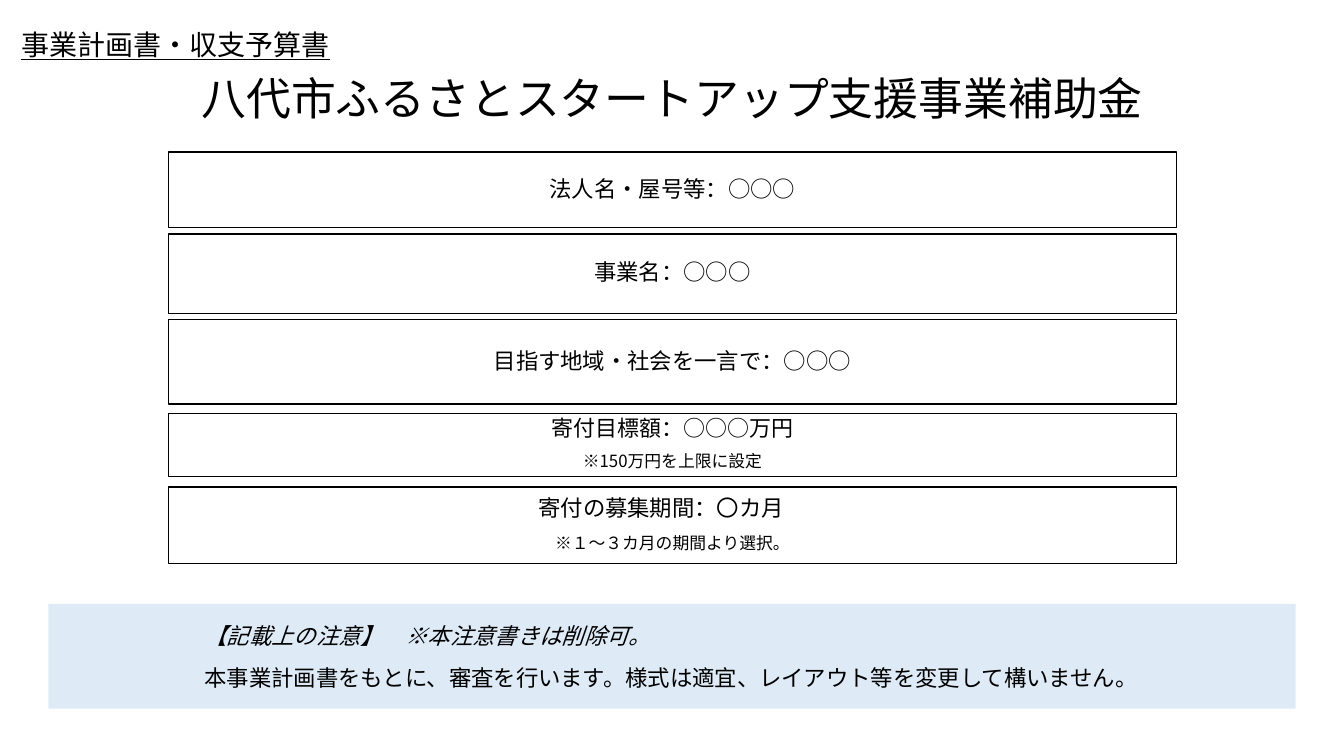
from dataclasses import dataclass

import lxml.etree
import pptx
import pptx.dml.color
import pptx.enum.shapes
import pptx.enum.text
import pptx.oxml.ns
import pptx.util

Inches = pptx.util.Inches
Pt = pptx.util.Pt
Align = pptx.enum.text.PP_ALIGN
Anchor = pptx.enum.text.MSO_ANCHOR


@dataclass(frozen=True)
class Theme:
    font: str = "Noto Sans CJK JP"
    ink: str = "000000"
    paper: str = "FFFFFF"
    tint: str = "DEEBF7"
    title: float = 32
    label: float = 20
    body: float = 16
    goal: float = 15.7
    hint: float = 12


THEME = Theme()


def color(code):
    return pptx.dml.color.RGBColor.from_string(code)


def style(para, size, align, space=None):
    """Set the type of a paragraph, for Latin and East Asian letters alike."""
    para.alignment = align
    para.line_spacing = space
    font = para.font
    font.size = Pt(size)
    font.color.rgb = color(THEME.ink)
    font.name = THEME.font
    qn = pptx.oxml.ns.qn
    props = para._p.pPr.find(qn("a:defRPr"))
    lxml.etree.SubElement(props, qn("a:ea")).set("typeface", THEME.font)


def write(frame, lines, align, space=None):
    """Fill a frame with (text, size) lines, 10 pt apart."""
    frame.word_wrap = True
    for i, (text, size) in enumerate(lines):
        para = frame.add_paragraph() if i else frame.paragraphs[0]
        para.text = text
        style(para, size, align, space)
        if i:
            para.space_before = Pt(10)


def add_text(slide, place, text, size, align, space=None):
    box = slide.shapes.add_textbox(*map(Inches, place))
    write(box.text_frame, [(text, size)], align, space)
    return box.text_frame


def add_box(slide, place, fill, lines, align, space, edge=None):
    box = slide.shapes.add_shape(
        pptx.enum.shapes.MSO_SHAPE.RECTANGLE, *map(Inches, place))
    box.shadow.inherit = False
    box.fill.solid()
    box.fill.fore_color.rgb = color(fill)
    if edge:
        box.line.color.rgb = color(edge)
        box.line.width = Pt(1)
    else:
        box.line.fill.background()
    frame = box.text_frame
    frame.vertical_anchor = Anchor.MIDDLE
    write(frame, lines, align, space)
    return frame


def add_fields(slide):
    body, hint = THEME.body, THEME.hint
    fields = [
        (1.51, 0.75, 0.9, [("法人名・屋号等：○○○", body)]),
        (2.32, 0.79, 0.9, [("事業名：○○○", body)]),
        (3.17, 0.84, 0.9, [("目指す地域・社会を一言で：○○○", body)]),
        (4.1, 0.63, 0.8, [("寄付目標額：○○○万円", THEME.goal),
                          ("※150万円を上限に設定", hint)]),
        (4.83, 0.76, 0.9, [("寄付の募集期間：〇カ月　", body),
                           ("※１～３カ月の期間より選択。", hint)]),
    ]
    for top, height, space, lines in fields:
        add_box(slide, (1.67, top, 10, height), THEME.paper, lines,
                Align.CENTER, space, THEME.ink)


def add_note(slide):
    lines = ["【記載上の注意】　※本注意書きは削除可。",
             "本事業計画書をもとに、審査を行います。様式は適宜、レイアウト等を変更して構いません。"]
    frame = add_box(slide, (0.48, 5.99, 12.37, 1.04), THEME.tint,
                    [(line, THEME.body) for line in lines],
                    Align.LEFT, Pt(20))
    frame.margin_left = Inches(1.55)
    frame.paragraphs[0].font.italic = True


def main():
    deck = pptx.Presentation()
    deck.slide_width = Inches(13.33)
    deck.slide_height = Inches(7.5)
    slide = deck.slides.add_slide(deck.slide_layouts[6])
    title = add_text(slide, (1.67, 0.52, 10, 0.77),
                     "八代市ふるさとスタートアップ支援事業補助金",
                     THEME.title, Align.CENTER, 0.9)
    title.vertical_anchor = Anchor.BOTTOM
    add_fields(slide)
    add_note(slide)
    label = add_text(slide, (-1.32, 0.22, 4.69, 0.44),
                     "事業計画書・収支予算書", THEME.label, Align.RIGHT)
    label.paragraphs[0].font.underline = True
    deck.save("out.pptx")


if __name__ == "__main__":
    main()
